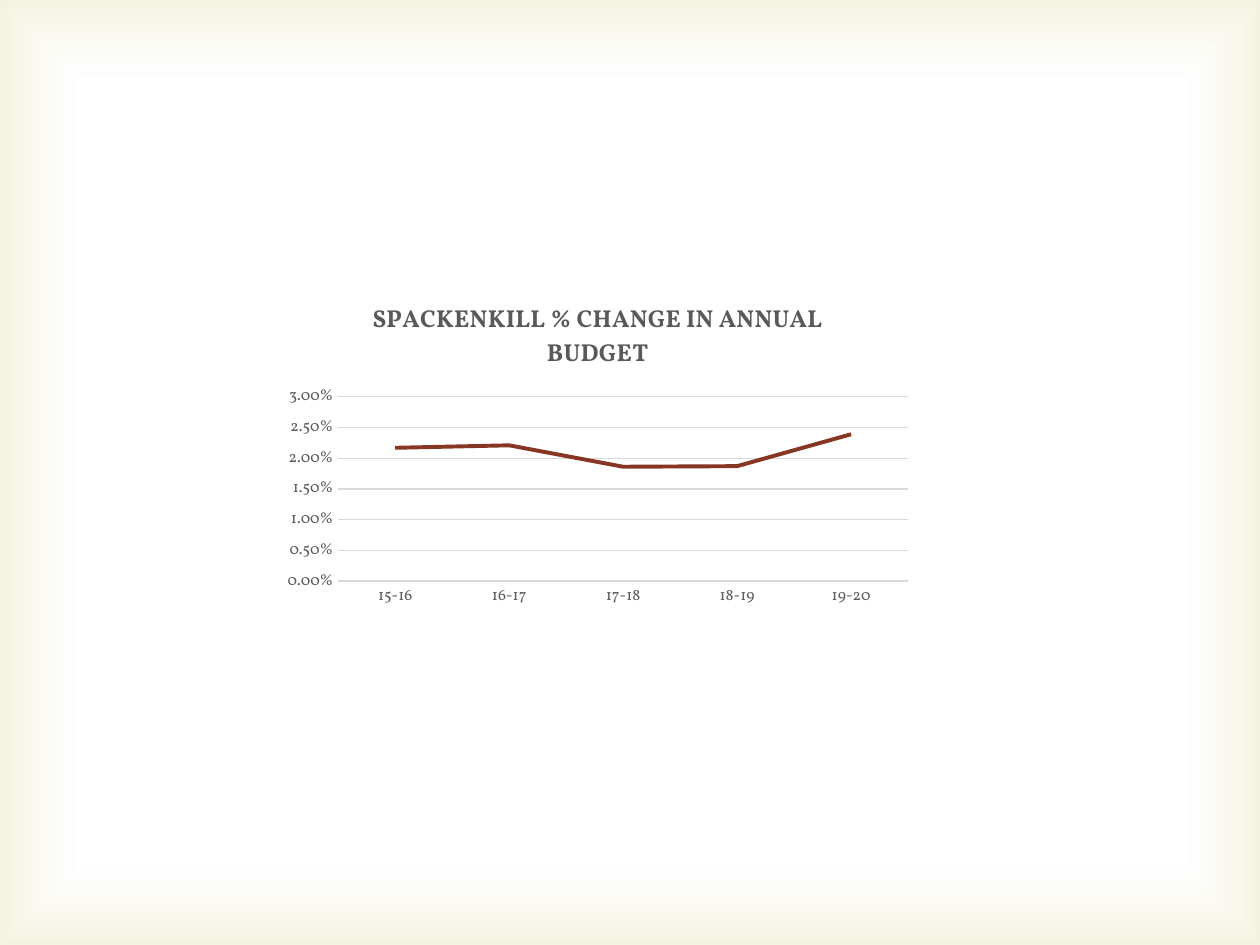
"""Build a slide with a line chart of yearly budget change on a softly tinted frame."""
from lxml import etree
from pptx import Presentation
from pptx import util as u
from pptx.chart.data import CategoryChartData
from pptx.dml.color import RGBColor
from pptx.enum import chart as ch, shapes
from pptx.oxml import parse_xml
from pptx.oxml.ns import nsdecls

TITLE = "SPACKENKILL % CHANGE IN ANNUAL BUDGET"
BUDGET_CHANGE = {"15-16": 0.0217, "16-17": 0.0221, "17-18": 0.0186,
                 "18-19": 0.0187, "19-20": 0.0239}
GLOW_STOPS = [(83, "FFFFFF", 11), (100, "D1CA75", 23)]
CHART_BOX = (2.18, 2.25, 5.13, 2.62)
FONT = "Vollkorn"
WHITE = RGBColor(0xFF, 0xFF, 0xFF)
BLACK = RGBColor(0, 0, 0)
GRAY = RGBColor(0x59, 0x59, 0x59)
GRID = RGBColor(0xD9, 0xD9, 0xD9)
RUST = RGBColor(0x87, 0x36, 0x24)


def style(font, size, color, bold=False):
    font.name, font.size, font.bold = FONT, u.Pt(size), bold
    font.color.rgb = color


def write(tf, text, **fmt):
    r = tf.paragraphs[0].add_run()
    r.text = text
    style(r.font, **fmt)


def stroke(line, color, width):
    line.color.rgb = color
    line.width = u.Pt(width)


def add_glow(s, width, height):
    sp = s.shapes.add_shape(shapes.MSO_SHAPE.RECTANGLE, 0, 0, width, height)
    sp.shadow.inherit = False
    sp.line.fill.background()
    sp.fill.solid()
    stops = "".join(
        f'<a:gs pos="{pos * 1000}"><a:srgbClr val="{color}">'
        f'<a:alpha val="{alpha * 1000}"/></a:srgbClr></a:gs>'
        for pos, color, alpha in GLOW_STOPS)
    gradient = parse_xml(
        f'<a:gradFill {nsdecls("a")} rotWithShape="1"><a:gsLst>{stops}</a:gsLst>'
        '<a:path path="rect"><a:fillToRect l="50000" t="50000" r="50000" b="50000"/>'
        '</a:path></a:gradFill>')
    solid = sp.element.spPr.find("{*}solidFill")
    solid.getparent().replace(solid, gradient)


def add_budget_chart(s):
    data = CategoryChartData(number_format="0.00%")
    data.categories = list(BUDGET_CHANGE)
    data.add_series("Series 1", list(BUDGET_CHANGE.values()))
    box = [u.Inches(v) for v in CHART_BOX]
    chart = s.shapes.add_chart(ch.XL_CHART_TYPE.LINE, *box, data).chart
    style(chart.font, 10, BLACK)
    chart.has_legend = False
    chart.has_title = True
    write(chart.chart_title.text_frame, TITLE, size=14, color=GRAY, bold=True)
    chart.chart_title.include_in_layout = False

    plot = chart.plots[0]
    plot.vary_by_categories = False
    series = plot.series[0]
    series.smooth = False
    series.marker.style = ch.XL_MARKER_STYLE.NONE
    stroke(series.format.line, RUST, 2.25)

    years, percent = chart.category_axis, chart.value_axis
    for axis in (years, percent):
        axis.major_tick_mark = axis.minor_tick_mark = ch.XL_TICK_MARK.NONE
        style(axis.tick_labels.font, 9, GRAY)
    stroke(years.format.line, GRID, 0.75)
    percent.format.line.fill.background()
    stroke(percent.major_gridlines.format.line, GRID, 0.75)
    percent.minimum_scale, percent.maximum_scale, percent.major_unit = 0, 0.03, 0.005
    percent.tick_labels.number_format = "0.00%"
    percent.tick_labels.number_format_is_linked = False


def main():
    prs = Presentation()
    prs.slide_width, prs.slide_height = u.Inches(10), u.Inches(7.5)
    s = prs.slides.add_slide(prs.slide_layouts[6])
    s.background.fill.solid()
    s.background.fill.fore_color.rgb = WHITE
    add_glow(s, prs.slide_width, prs.slide_height)
    add_budget_chart(s)
    prs.save("out.pptx")


if __name__ == "__main__":
    main()
